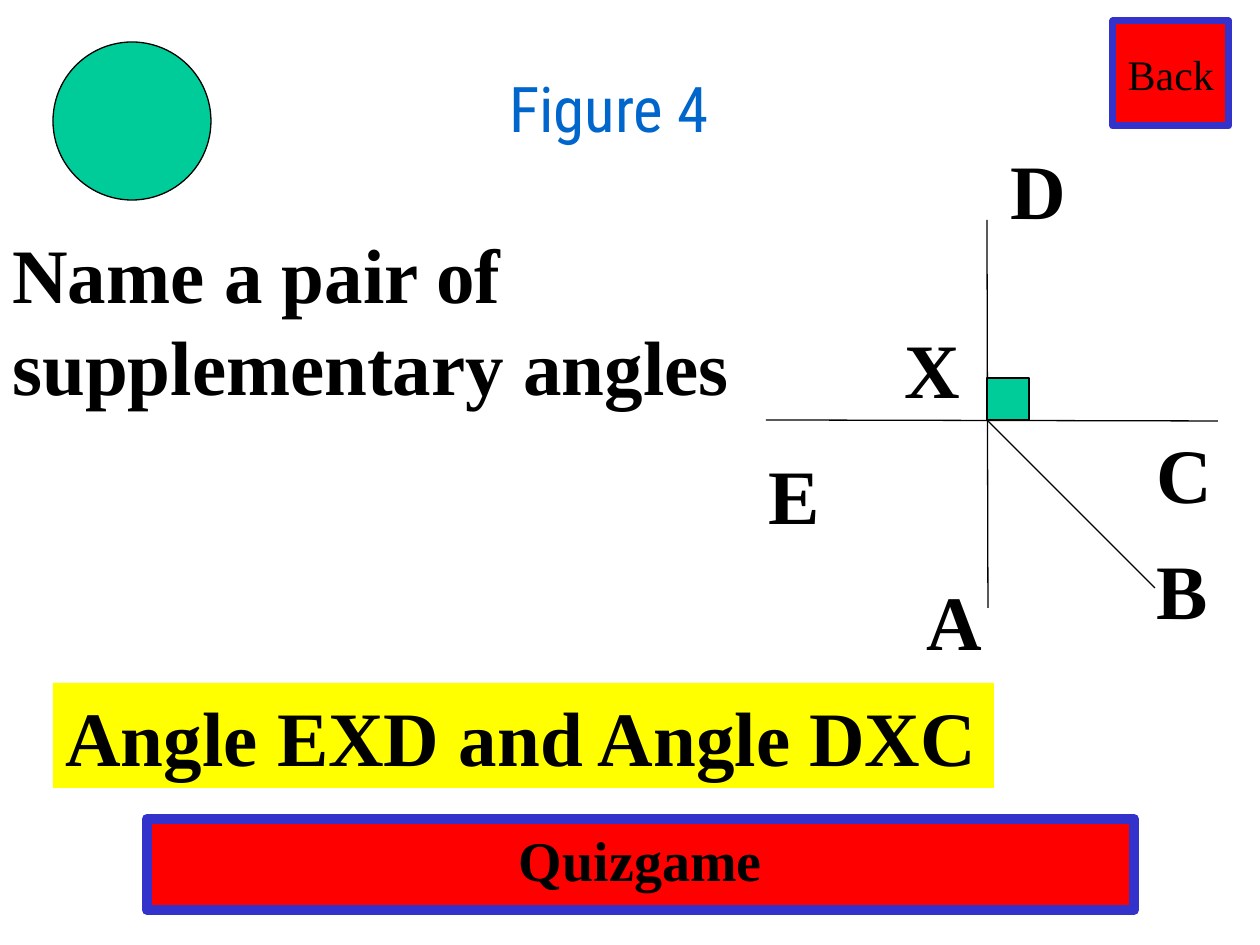
from lxml import etree
from pptx import Presentation
from pptx.dml.color import RGBColor
from pptx.enum.shapes import MSO_CONNECTOR, MSO_SHAPE
from pptx.enum.text import MSO_ANCHOR, PP_ALIGN
from pptx.oxml.ns import qn
from pptx.util import Emu, Pt

PX = 914400 // 126
SERIF, CONDENSED = "Times New Roman", "Roboto Condensed"
BLACK, RED, BLUE, GREEN, YELLOW = "000000", "FF0000", "3333CC", "00CC99", "FFFF00"
LEFT, CENTER = PP_ALIGN.LEFT, PP_ALIGN.CENTER

# Geometry is (left, top, width, height) in px
TITLE = ("Figure 4", (294, 63, 630, 78))
QUESTION = ("Name a pair of supplementary angles", (0, 220, 766, 198))
ANSWER = ("Angle EXD and Angle DXC", (53, 683, 941, 105))
BACK_BUTTON = ("Back", (1113, 21, 116, 105))
HOME_BUTTON = ("Quizgame", (147, 819, 987, 91))
CIRCLE = (53, 42, 158, 158)
RIGHT_ANGLE = (987, 378, 42, 42)

RAYS = [  # from x, y to x, y
    (987, 220, 988, 608),
    (766, 420, 1218, 421),
    (987, 420, 1155, 588),
]
POINT_SIZE = (73, 105)
POINTS = {
    "D": (998, 136),
    "X": (892, 315),
    "A": (914, 567),
    "C": (1144, 420),
    "B": (1144, 536),
    "E": (756, 441),
}


def px(*lengths):
    return [Emu(length * PX) for length in lengths]


def color(hex_code):
    return RGBColor.from_string(hex_code)


def add_figure(slide, preset, box, fill, line=None, line_width=0.75):
    figure = slide.shapes.add_shape(preset, *px(*box))
    figure.shadow.inherit = False
    figure.fill.solid()
    figure.fill.fore_color.rgb = color(fill)
    if line:
        figure.line.color.rgb = color(line)
        figure.line.width = Pt(line_width)
    else:
        figure.line.fill.background()
    return figure


def write(shape, text, size, bold=True, font=SERIF, ink=BLACK, align=LEFT,
          wrap=True, anchor=MSO_ANCHOR.TOP):
    frame = shape.text_frame
    frame.word_wrap = wrap
    frame.vertical_anchor = anchor
    paragraph = frame.paragraphs[0]
    paragraph.alignment = align
    run = paragraph.add_run()
    run.text = text
    run.font.name = font
    run.font.size = Pt(size)
    run.font.bold = bold
    run.font.color.rgb = color(ink)
    return run


def outline_text(run, hex_code, width):
    line = etree.Element(qn("a:ln"), w=str(Pt(width)))
    fill = etree.SubElement(line, qn("a:solidFill"))
    etree.SubElement(fill, qn("a:srgbClr"), val=hex_code)
    run.font._element.insert(0, line)


def add_ray(slide, ends):
    ray = slide.shapes.add_connector(MSO_CONNECTOR.STRAIGHT, *px(*ends))
    ray.line.color.rgb = color(BLACK)
    ray.line.width = Pt(0.75)
    etree.SubElement(ray._element.spPr, qn("a:effectLst"))


def main():
    deck = Presentation()
    deck.slide_width, deck.slide_height = px(1260, 945)
    slide = deck.slides.add_slide(deck.slide_layouts[6])

    text, box = HOME_BUTTON
    write(add_figure(slide, MSO_SHAPE.RECTANGLE, box, RED, BLUE, 6), text, 32, align=CENTER)

    text, box = TITLE
    title = write(slide.shapes.add_textbox(*px(*box)), text, 36, bold=False,
                  font=CONDENSED, ink="0066CC", align=CENTER, wrap=False)
    outline_text(title, "99CCFF", 1.5)

    text, box = QUESTION
    write(slide.shapes.add_textbox(*px(*box)), text, 44)

    text, box = ANSWER
    write(add_figure(slide, MSO_SHAPE.RECTANGLE, box, YELLOW), text, 44, wrap=False)

    text, box = BACK_BUTTON
    write(add_figure(slide, MSO_SHAPE.RECTANGLE, box, RED, BLUE, 4), text, 24, bold=False,
          align=CENTER, wrap=False, anchor=MSO_ANCHOR.MIDDLE)

    add_figure(slide, MSO_SHAPE.OVAL, CIRCLE, GREEN, BLACK)
    for ends in RAYS:
        add_ray(slide, ends)
    add_figure(slide, MSO_SHAPE.RECTANGLE, RIGHT_ANGLE, GREEN, BLACK)
    for letter, corner in POINTS.items():
        write(slide.shapes.add_textbox(*px(*corner, *POINT_SIZE)), letter, 44)

    deck.save("out.pptx")


if __name__ == "__main__":
    main()
